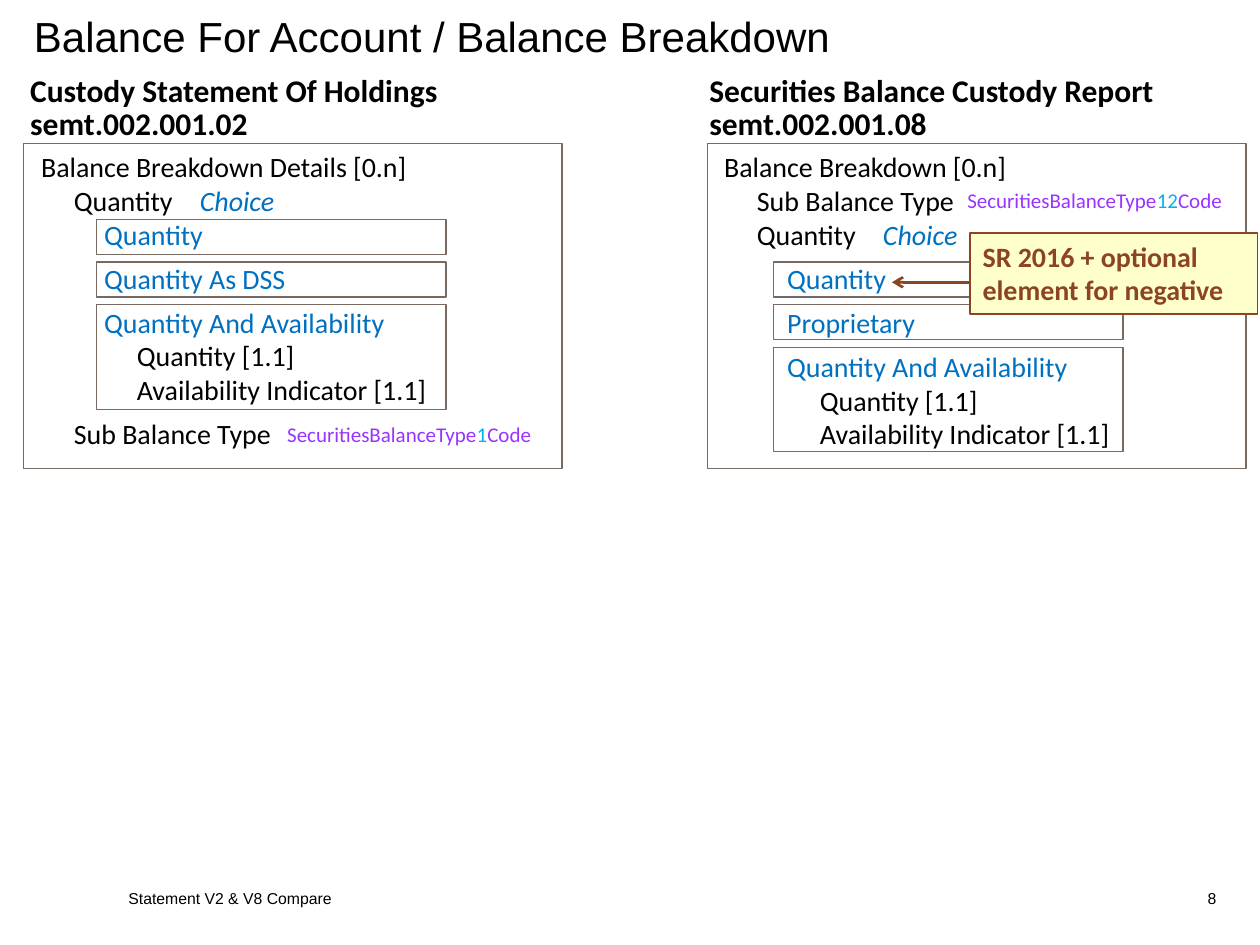
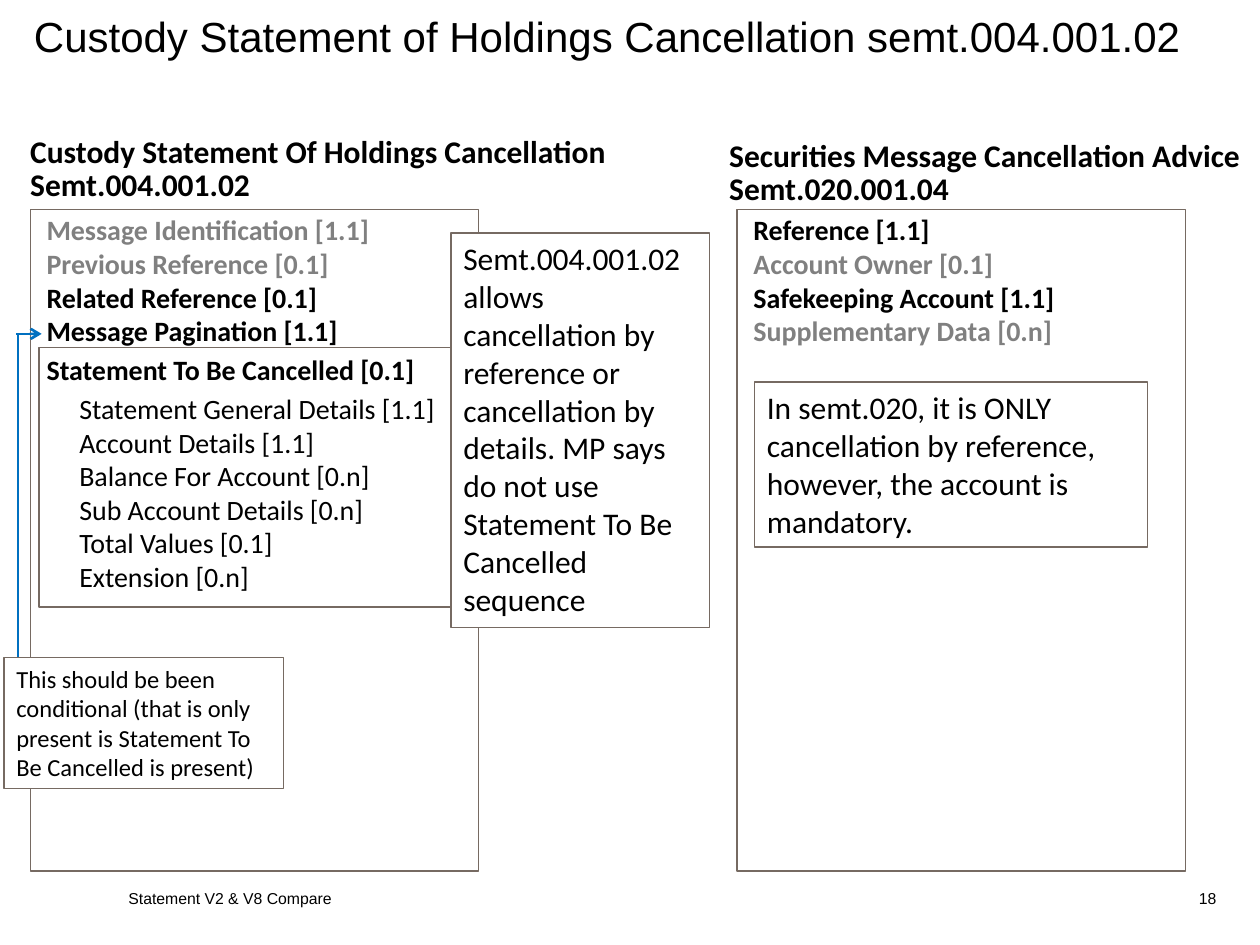
from dataclasses import dataclass
from typing import NamedTuple, Optional

from lxml.etree import SubElement
from pptx import Presentation
from pptx.dml.color import RGBColor
from pptx.enum.shapes import MSO_CONNECTOR, MSO_SHAPE
from pptx.enum.text import MSO_ANCHOR, MSO_AUTO_SIZE, PP_ALIGN
from pptx.oxml.ns import qn
from pptx.util import Cm, Pt

COLORS = {
    "black": "000000",
    "gray": "808080",
    "blue": "0070C0",
    "cyan": "00B0F0",
    "purple": "9933FF",
    "frame": "766A62",
    "brown": "8B4522",
    "cream": "FFFFCC",
    "white": "FFFFFF",
}
TAB_STOPS = (0.66, 1.27, 1.93, 3.2)
FOOTER = "Statement V2 & V8 Compare"
CHOICE_HEIGHTS = (0.71, 0.71, 2.11)
CHOICE_GAP = 0.15


class Box(NamedTuple):
    left: float
    top: float
    width: float
    height: float


class Run(NamedTuple):
    text: str
    color: str = "black"
    bold: bool = False
    italic: bool = False


class Para(NamedTuple):
    runs: tuple[Run, ...]
    after: float = 0
    line: Optional[float] = None


class Arrow(NamedTuple):
    start: tuple[float, float]
    end: tuple[float, float]
    color: str
    head: bool = True


@dataclass
class TextBlock:
    box: Box
    paras: list[Para]
    size: float = 16
    font: str = "Calibri"
    wrap: bool = False
    grow: bool = True
    anchor: MSO_ANCHOR = MSO_ANCHOR.TOP
    align: PP_ALIGN = PP_ALIGN.LEFT


@dataclass
class Note:
    box: Box
    text: str
    size: float = 18
    fill: str = "white"
    line: str = "frame"
    width: float = 0.75
    color: str = "black"
    bold: bool = False


def rgb(name: str) -> RGBColor:
    return RGBColor.from_string(COLORS[name])


def place(box: Box) -> tuple:
    return tuple(Cm(v) for v in box)


def line(text: str, color: str = "black", bold: bool = False, after: float = 0) -> Para:
    return Para((Run(text, color, bold),), after)


def add_tabs(p) -> None:
    tabs = SubElement(p._p.get_or_add_pPr(), qn("a:tabLst"))
    for stop in TAB_STOPS:
        SubElement(tabs, qn("a:tab"), pos=str(Cm(stop)), algn="l")


def fill_text(tf, block: TextBlock) -> None:
    frame_format = {
        "word_wrap": block.wrap,
        "auto_size": MSO_AUTO_SIZE.SHAPE_TO_FIT_TEXT if block.grow else MSO_AUTO_SIZE.NONE,
        "vertical_anchor": block.anchor,
    }
    for name, value in frame_format.items():
        setattr(tf, name, value)
    for i, para in enumerate(block.paras):
        p = tf.add_paragraph() if i else tf.paragraphs[0]
        if any("\t" in run.text for run in para.runs):
            add_tabs(p)
        p.alignment = block.align
        p.space_after = Pt(para.after)
        if para.line:
            p.line_spacing = Pt(para.line)
        for run in para.runs:
            r = p.add_run()
            r.text = run.text
            font_format = {
                "name": block.font,
                "size": Pt(block.size),
                "bold": run.bold,
                "italic": run.italic,
            }
            for name, value in font_format.items():
                setattr(r.font, name, value)
            r.font.color.rgb = rgb(run.color)


def add_text(s, block: TextBlock) -> None:
    fill_text(s.shapes.add_textbox(*place(block.box)).text_frame, block)


def add_frame(s, box: Box, color: str = "frame", width: float = 0.75, fill: str = ""):
    sp = s.shapes.add_shape(MSO_SHAPE.RECTANGLE, *place(box))
    sp.shadow.inherit = False
    if fill:
        sp.fill.solid()
        sp.fill.fore_color.rgb = rgb(fill)
    else:
        sp.fill.background()
    sp.line.color.rgb = rgb(color)
    sp.line.width = Pt(width)
    return sp


def add_choices(s, left: float, top: float) -> None:
    for height in CHOICE_HEIGHTS:
        add_frame(s, Box(left, top, 7.04, height))
        top += height + CHOICE_GAP


def add_note(s, note: Note) -> None:
    sp = add_frame(s, note.box, note.line, note.width, note.fill)
    paras = [line(note.text, note.color, note.bold)]
    fill_text(sp.text_frame, TextBlock(note.box, paras, note.size, wrap=True))


def add_arrow(s, arrow: Arrow) -> None:
    ends = (Cm(v) for v in arrow.start + arrow.end)
    c = s.shapes.add_connector(MSO_CONNECTOR.STRAIGHT, *ends)
    c.line.color.rgb = rgb(arrow.color)
    c.line.width = Pt(1.5)
    if arrow.head:
        SubElement(c.line._get_or_add_ln(), qn("a:tailEnd"), type="arrow")
    SubElement(c._element.spPr, qn("a:effectLst"))


def add_heading(s, box: Box, title: str, message: str, title_line: Optional[float] = 19) -> None:
    paras = [
        Para((Run(title, bold=True),), line=title_line),
        Para((Run(message, bold=True),), line=19),
    ]
    add_text(s, TextBlock(box, paras, 18))


def add_type_code(s, box: Box, number: str) -> None:
    runs = (
        Run("SecuritiesBalanceType", "purple"),
        Run(number, "cyan"),
        Run("Code", "purple"),
    )
    add_text(s, TextBlock(box, [Para(runs)], 12))


def new_slide(prs, title: str, number: int):
    s = prs.slides.add_slide(prs.slide_layouts[5])
    sp = s.shapes.title
    box = Box(0.43, 0, 24.71, 1.42)
    sp.left, sp.top, sp.width, sp.height = place(box)
    middle = {"font": "Arial", "wrap": True, "grow": False, "anchor": MSO_ANCHOR.MIDDLE}
    fill_text(sp.text_frame, TextBlock(box, [line(title)], 24, **middle))
    footers = (
        (Box(2.34, 17.78, 15.77, 0.64), FOOTER, PP_ALIGN.LEFT),
        (Box(22.66, 17.78, 2.11, 0.64), str(number), PP_ALIGN.RIGHT),
    )
    for box, text, align in footers:
        add_text(s, TextBlock(box, [line(text)], 9, align=align, **middle))
    return s


def build_breakdown(prs) -> None:
    s = new_slide(prs, "Balance For Account / Balance Breakdown", 8)
    for left in (0.48, 14.27):
        add_frame(s, Box(left, 2.9, 10.85, 6.55))
    add_choices(s, 1.95, 4.42)
    add_choices(s, 15.6, 5.28)

    choice = Run("\tChoice", "blue", italic=True)
    availability = [
        line("\t\tQuantity And Availability", "blue"),
        line("\t\t\tQuantity [1.1]"),
    ]
    indicator = "\t\t\tAvailability Indicator [1.1]"
    old_paras = [
        line("Balance Breakdown Details [0.n]"),
        Para((Run("\tQuantity"), choice)),
        line("\t\tQuantity", "blue", after=6),
        line("\t\tQuantity As DSS", "blue", after=6),
        *availability,
        line(indicator, after=6),
        line("\tSub Balance Type"),
    ]
    new_paras = [
        line("Balance Breakdown [0.n]"),
        line("\tSub Balance Type"),
        Para((Run("\tQuantity"), choice), 6),
        line("\t\tQuantity", "blue", after=6),
        line("\t\tProprietary", "blue", after=6),
        *availability,
        line(indicator),
    ]
    add_text(s, TextBlock(Box(0.58, 2.9, 8.48, 6.58), old_paras))
    add_text(s, TextBlock(Box(14.35, 2.9, 10.59, 6.38), new_paras, wrap=True))
    add_type_code(s, Box(5.54, 8.38, 5.49, 0.76), "1")
    add_type_code(s, Box(19.25, 3.66, 5.69, 0.76), "12")
    add_heading(s, Box(0.36, 1.4, 8.79, 1.6), "Custody Statement Of Holdings", "semt.002.001.02")
    add_heading(s, Box(14.05, 1.4, 9.55, 1.6), "Securities Balance Custody Report", "semt.002.001.08")
    add_arrow(s, Arrow((20.93, 5.69), (17.98, 5.69), "brown"))
    add_note(s, Note(Box(19.56, 4.7, 5.79, 1.63), "SR 2016 + optional element for negative",
                     16, "cream", "brown", 1, "brown", True))


def build_cancellation(prs) -> None:
    s = new_slide(prs, "Custody Statement of Holdings Cancellation semt.004.001.02", 18)
    for left in (0.61, 14.86):
        add_frame(s, Box(left, 4.22, 9.04, 13.34))
    add_frame(s, Box(0.79, 7.01, 8.48, 5.23))

    details = (
        "Statement General Details [1.1]",
        "Account Details [1.1]",
        "Balance For Account [0.n]",
        "Sub Account Details [0.n]",
        "Total Values [0.1]",
        "Extension [0.n]",
    )
    old_paras = [
        line("Message Identification [1.1]", "gray", True),
        line("Previous Reference [0.1]", "gray", True),
        line("Related Reference [0.1]", bold=True),
        line("Message Pagination [1.1]", bold=True, after=3),
        line("Statement To Be Cancelled [0.1]", bold=True, after=3),
        *(line("\t" + detail) for detail in details),
    ]
    new_paras = [
        line("Reference [1.1]", bold=True),
        line("Account Owner [0.1]", "gray", True),
        line("Safekeeping Account [1.1]", bold=True),
        line("Supplementary Data [0.n]", "gray", True, 3),
    ]
    add_text(s, TextBlock(Box(0.69, 4.17, 8.59, 8), old_paras))
    add_text(s, TextBlock(Box(14.94, 4.17, 6.68, 3), new_paras))
    add_heading(s, Box(0.36, 2.62, 12.42, 1.6),
                "Custody Statement Of Holdings Cancellation", "Semt.004.001.02")
    add_heading(s, Box(14.45, 2.62, 10.9, 1.7),
                "Securities Message Cancellation Advice", "Semt.020.001.04", None)
    add_arrow(s, Arrow((0.33, 6.73), (0.84, 6.73), "blue"))
    add_arrow(s, Arrow((0.36, 6.76), (0.36, 13.61), "blue", False))
    notes = (
        Note(Box(9.09, 4.7, 5.21, 7.95),
             "Semt.004.001.02 allows cancellation by reference or cancellation by details. "
             "MP says do not use Statement To Be Cancelled sequence"),
        Note(Box(15.21, 7.7, 7.92, 3.33),
             "In semt.020, it is ONLY cancellation by reference, however, "
             "the account is mandatory."),
        Note(Box(0.08, 13.26, 5.64, 2.64),
             "This should be been conditional (that is only present is "
             "Statement To Be Cancelled is present)", 14),
    )
    for note in notes:
        add_note(s, note)


def main() -> None:
    prs = Presentation()
    prs.slide_width, prs.slide_height = Cm(25.4), Cm(19.05)
    build_breakdown(prs)
    build_cancellation(prs)
    prs.save("out.pptx")


if __name__ == "__main__":
    main()
